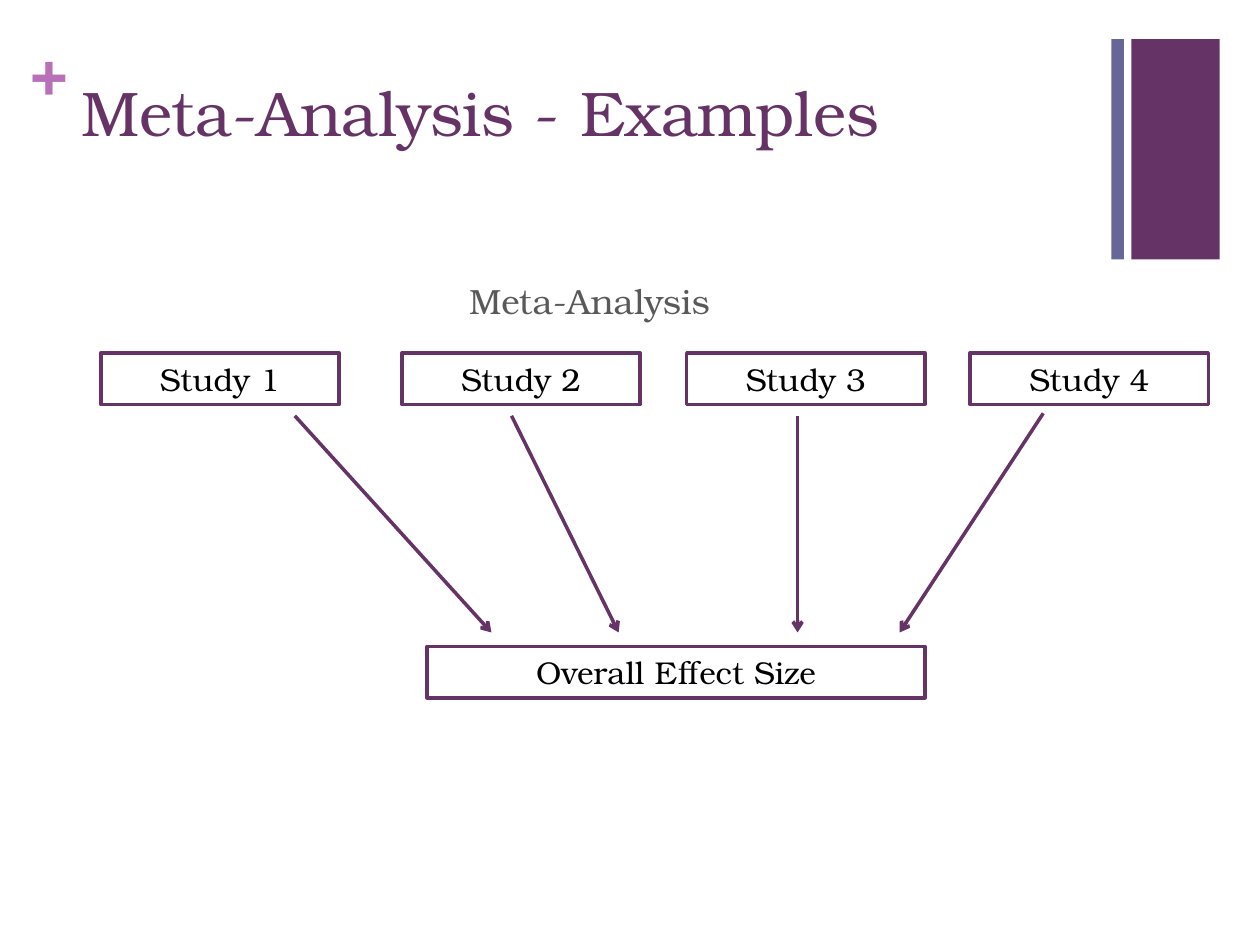
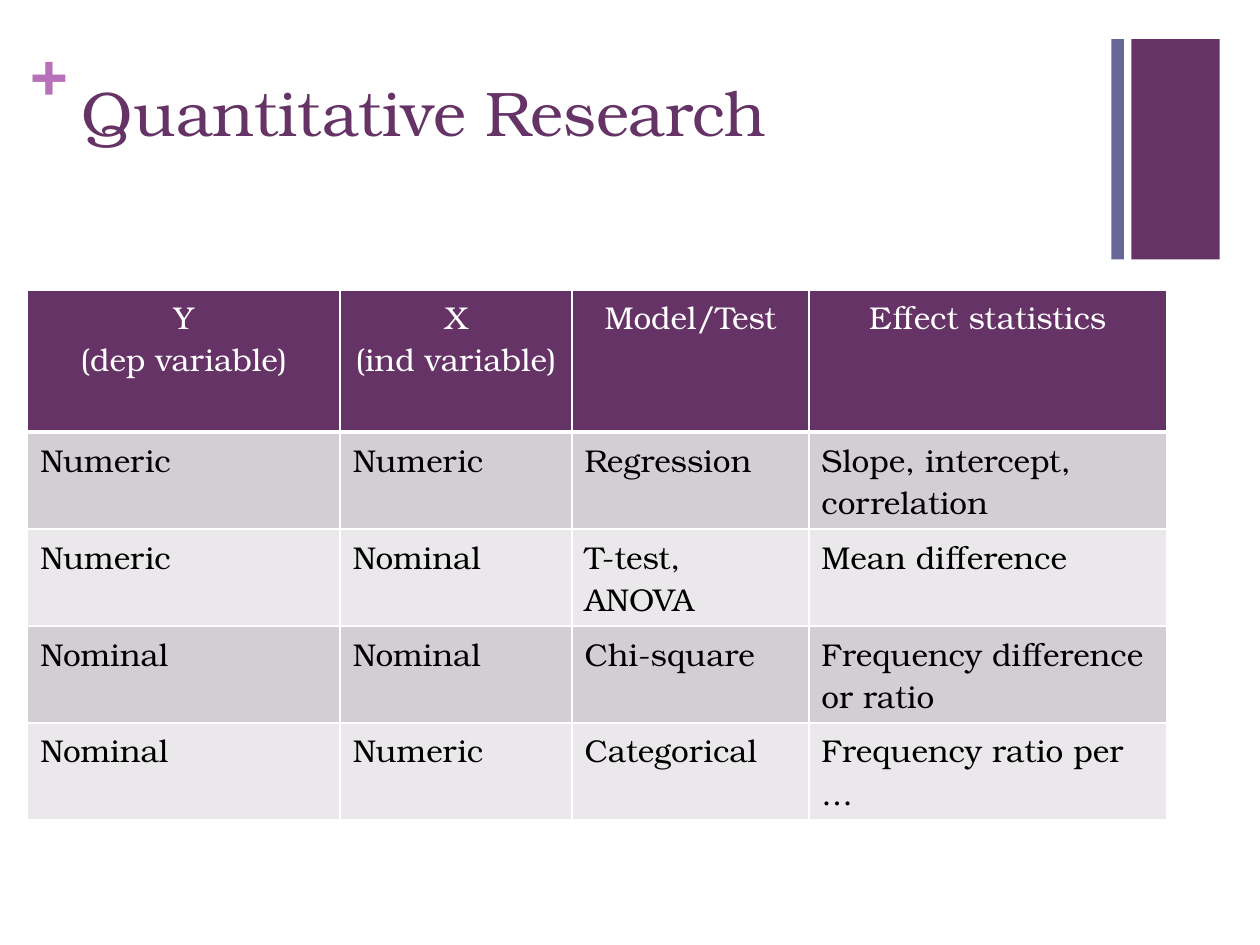
from dataclasses import dataclass

from lxml import etree
from pptx import Presentation
from pptx.dml.color import RGBColor
from pptx.enum.shapes import MSO_CONNECTOR, MSO_SHAPE
from pptx.enum.text import MSO_ANCHOR, MSO_AUTO_SIZE, PP_ALIGN
from pptx.oxml.ns import qn
from pptx.util import Inches, Pt

LEFT, CENTER = PP_ALIGN.LEFT, PP_ALIGN.CENTER
TOP, MIDDLE = MSO_ANCHOR.TOP, MSO_ANCHOR.MIDDLE
NO_AUTOFIT = MSO_AUTO_SIZE.NONE
RECTANGLE, STRAIGHT = MSO_SHAPE.RECTANGLE, MSO_CONNECTOR.STRAIGHT
TITLE_AND_CONTENT, TITLE_ONLY = 1, 5


@dataclass(frozen=True)
class Theme:
    font: str = "TeX Gyre Bonum"
    plum: str = "663366"
    slate: str = "666699"
    orchid: str = "B870B8"
    gray: str = "595959"
    black: str = "000000"
    white: str = "FFFFFF"
    bands: tuple = ("D3CED3", "EAE8EA")
    title_size: int = 36
    body_size: int = 20
    label_size: int = 18
    line_width: int = 2


def rgb(color):
    return RGBColor.from_string(color)


def inches(*lengths):
    return [Inches(length) for length in lengths]


def set_all(target, values):
    for name, value in values.items():
        setattr(target, name, value)


class Deck:
    def __init__(self, theme):
        self.theme = theme
        self.presentation = Presentation()
        set_all(self.presentation, {"slide_width": Inches(10), "slide_height": Inches(7.5)})
        self.slide = None

    def set_text(self, frame, text, size, color, align=LEFT, anchor=TOP, bold=False):
        set_all(frame, {"text": text, "word_wrap": True,
                        "auto_size": NO_AUTOFIT, "vertical_anchor": anchor})
        self.style_paragraphs(frame, size, color, align, bold)

    def style_paragraphs(self, frame, size, color, align, bold=False):
        for paragraph in frame.paragraphs:
            paragraph.alignment = align
            set_all(paragraph.font, {"name": self.theme.font, "size": Pt(size), "bold": bold})
            paragraph.font.color.rgb = rgb(color)

    def place(self, placeholder, at):
        set_all(placeholder, dict(zip(("left", "top", "width", "height"), inches(*at))))

    def rectangle(self, at, fill, outline=None):
        shape = self.slide.shapes.add_shape(RECTANGLE, *inches(*at))
        shape.shadow.inherit = False
        shape.fill.solid()
        shape.fill.fore_color.rgb = rgb(fill)
        if outline:
            shape.line.color.rgb = rgb(outline)
            shape.line.width = Pt(self.theme.line_width)
        else:
            shape.line.fill.background()
        return shape

    def start_slide(self, title, layout):
        """Add a slide with the shared title, plus sign and corner bands."""
        theme = self.theme
        self.slide = self.presentation.slides.add_slide(self.presentation.slide_layouts[layout])
        self.rectangle((8.98, 0.31, 0.7, 1.75), theme.plum)
        self.rectangle((8.82, 0.31, 0.1, 1.75), theme.slate)
        plus = self.slide.shapes.add_textbox(*inches(0.24, 0.25, 0.29, 0.61)).text_frame
        set_all(plus, dict.fromkeys(
            ("margin_left", "margin_top", "margin_right", "margin_bottom"), 0))
        self.set_text(plus, "+", theme.title_size, theme.orchid, bold=True)
        heading = self.slide.shapes.title
        self.place(heading, (0.55, 0.53, 8.26, 1.22))
        self.set_text(heading.text_frame, title, theme.title_size, theme.plum)

    def body(self, text):
        body = self.slide.placeholders[1]
        self.place(body, (0.55, 2.17, 8.26, 4.53))
        self.set_text(body.text_frame, text, self.theme.body_size, self.theme.gray, CENTER)
        for paragraph in body.text_frame.paragraphs:
            paragraph.space_before = Pt(20)
            properties = paragraph._p.get_or_add_pPr()
            properties.set("marL", "0")
            properties.set("indent", "0")
            properties.insert_element_before(
                properties.makeelement(qn("a:buNone")), "a:tabLst", "a:defRPr", "a:extLst")

    def labelled_box(self, text, at):
        box = self.rectangle(at, self.theme.white, self.theme.plum)
        self.set_text(box.text_frame, text, self.theme.label_size, self.theme.black,
                      CENTER, MIDDLE)

    def arrow(self, start, end):
        connector = self.slide.shapes.add_connector(STRAIGHT, *inches(*start, *end))
        connector.line.color.rgb = rgb(self.theme.plum)
        connector.line.width = Pt(self.theme.line_width)
        properties = connector._element.spPr
        etree.SubElement(properties.find(qn("a:ln")), qn("a:tailEnd"), type="arrow")
        etree.SubElement(properties, qn("a:effectLst"))

    def cell_borders(self, cell, bottom):
        properties = cell._tc.get_or_add_tcPr()
        for side, width in {"L": 1, "R": 1, "T": 1, "B": bottom}.items():
            border = etree.SubElement(properties, qn(f"a:ln{side}"), w=str(int(Pt(width))))
            fill = etree.SubElement(border, qn("a:solidFill"))
            etree.SubElement(fill, qn("a:srgbClr"), val=self.theme.white)

    def table(self, rows, left, top, widths, heights):
        theme = self.theme
        table = self.slide.shapes.add_table(
            len(rows), len(widths), *inches(left, top, sum(widths), sum(heights))).table
        for column, width in zip(table.columns, widths):
            column.width = Inches(width)
        for index, (texts, height) in enumerate(zip(rows, heights)):
            table.rows[index].height = Inches(height)
            header = index == 0
            fill = theme.plum if header else theme.bands[(index - 1) % 2]
            color, align = (theme.white, CENTER) if header else (theme.black, LEFT)
            for cell, text in zip(table.rows[index].cells, texts):
                self.cell_borders(cell, bottom=3 if header else 1)
                cell.fill.solid()
                cell.fill.fore_color.rgb = rgb(fill)
                cell.text = text
                self.style_paragraphs(cell.text_frame, theme.label_size, color, align)


def meta_analysis_slide(deck):
    deck.start_slide("Meta-Analysis - Examples", TITLE_AND_CONTENT)
    deck.body("Meta-Analysis")
    for number, left in enumerate((0.8, 3.19, 5.45, 7.7), start=1):
        deck.labelled_box(f"Study {number}", (left, 2.8, 1.89, 0.41))
    deck.labelled_box("Overall Effect Size", (3.39, 5.13, 3.95, 0.41))
    study_to_effect = ((2.34, 3.3, 3.9), (4.06, 3.3, 4.91), (6.33, 3.3, 6.33), (8.28, 3.28, 7.14))
    for study_x, study_y, effect_x in study_to_effect:
        deck.arrow((study_x, study_y), (effect_x, 5.02))


def quantitative_slide(deck):
    deck.start_slide("Quantitative Research", TITLE_ONLY)
    tests = (
        ("Y\n(dep variable)", "X\n(ind variable)", "Model/Test", "Effect statistics"),
        ("Numeric", "Numeric", "Regression", "Slope, intercept, correlation"),
        ("Numeric", "Nominal", "T-test, ANOVA", "Mean difference"),
        ("Nominal", "Nominal", "Chi-square", "Frequency difference or ratio"),
        ("Nominal", "Numeric", "Categorical", "Frequency ratio per …"),
    )
    deck.table(tests, 0.22, 2.3, widths=(2.48, 1.84, 1.88, 2.84), heights=(1.13,) + (0.77,) * 4)


def main():
    deck = Deck(Theme())
    meta_analysis_slide(deck)
    quantitative_slide(deck)
    deck.presentation.save("out.pptx")


if __name__ == "__main__":
    main()
